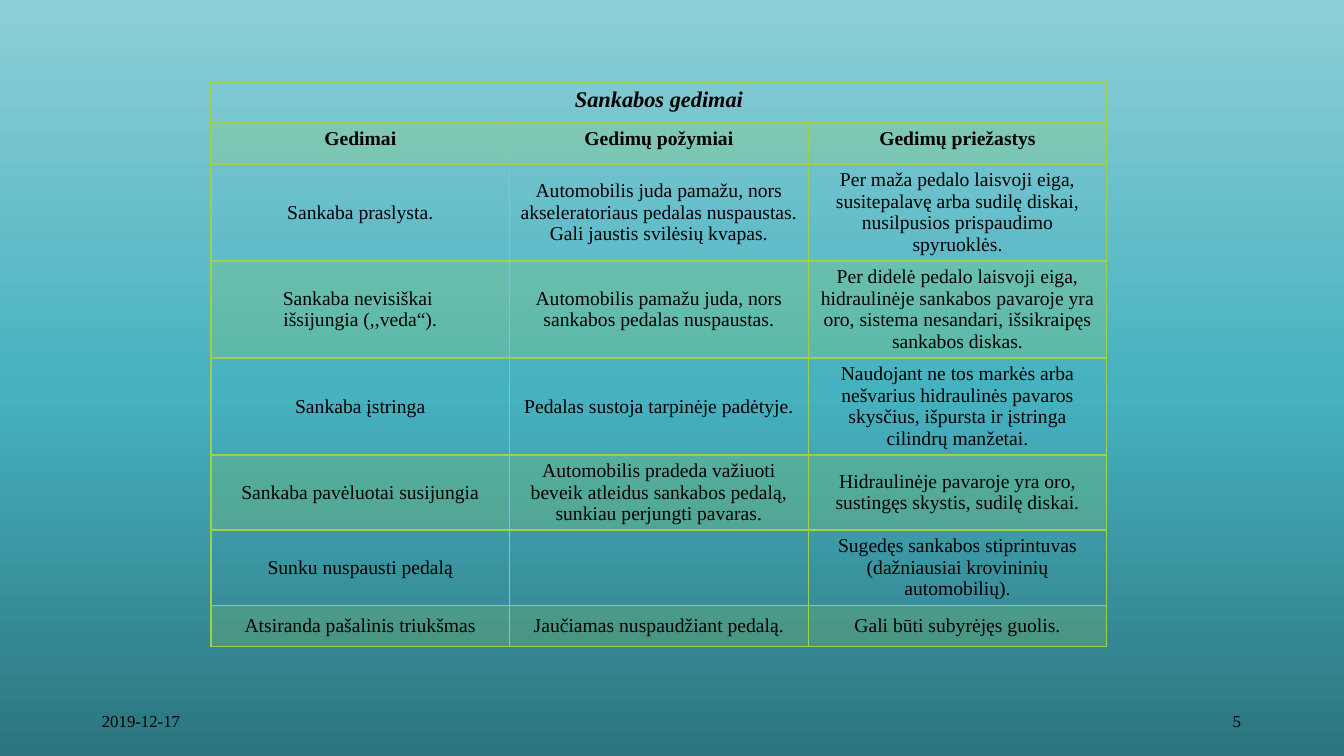
from copy import deepcopy
from dataclasses import dataclass

from lxml import etree
from pptx import Presentation
from pptx import util as u
from pptx.dml.color import RGBColor
from pptx.enum import text
from pptx.oxml.ns import qn

SCALE = 914400 / 100.8  # EMU per px


@dataclass(frozen=True)
class Theme:
    font: str = "Times New Roman"
    ink: str = "000000"
    accent: str = "A2CF49"
    band_opacity: int = 20
    background: tuple = ((0, "2C757F"), (0.48, "46B1BF"), (1, "8DCFD8"))
    title_size: int = 16
    body_size: int = 14
    footer_size: int = 12
    thin: int = 1
    thick: int = 2


THEME = Theme()
TITLE = "Sankabos gedimai"
HEADINGS = ("Gedimai", "Gedimų požymiai", "Gedimų priežastys")
FAULTS = (
    ("Sankaba praslysta.",
     "Automobilis juda pamažu, nors akseleratoriaus pedalas nuspaustas. Gali jaustis svilėsių kvapas.",
     "Per maža pedalo laisvoji eiga, susitepalavę arba sudilę diskai, nusilpusios prispaudimo spyruoklės."),
    ("Sankaba nevisiškai \nišsijungia (,,veda“).",
     "Automobilis pamažu juda, nors sankabos pedalas nuspaustas.",
     "Per didelė pedalo laisvoji eiga, hidraulinėje sankabos pavaroje yra oro, "
     "sistema nesandari, išsikraipęs sankabos diskas."),
    ("Sankaba įstringa",
     "Pedalas sustoja tarpinėje padėtyje.",
     "Naudojant ne tos markės arba nešvarius hidraulinės pavaros skysčius, "
     "išpursta ir įstringa cilindrų manžetai."),
    ("Sankaba pavėluotai susijungia",
     "Automobilis pradeda važiuoti beveik atleidus sankabos pedalą, sunkiau perjungti pavaras.",
     "Hidraulinėje pavaroje yra oro, sustingęs skystis, sudilę diskai."),
    ("Sunku nuspausti pedalą",
     "",
     "Sugedęs sankabos stiprintuvas (dažniausiai krovininių automobilių)."),
    ("Atsiranda pašalinis triukšmas",
     "Jaučiamas nuspaudžiant pedalą.",
     "Gali būti subyrėjęs guolis."),
)
ROW_HEIGHTS = (41, 41, 97, 97, 97, 75, 75, 41)


def px(length):
    return u.Emu(round(length * SCALE))


def write(frame, words, size, align, bold=False, italic=False):
    frame.text = words
    for para in frame.paragraphs:
        para.alignment = align
        for span in para.runs:
            span.font.name = THEME.font
            span.font.size = u.Pt(size)
            span.font.bold = bold
            span.font.italic = italic
            span.font.color.rgb = RGBColor.from_string(THEME.ink)


def paint_background(page):
    fill = page.background.fill
    fill.gradient()
    fill.gradient_angle = 90
    stop_list = page.element.find(".//" + qn("a:gsLst"))
    stop_list.append(deepcopy(stop_list[0]))
    for stop, (position, color) in zip(fill.gradient_stops, THEME.background):
        stop.position = position
        stop.color.rgb = RGBColor.from_string(color)


def draw_borders(cell, widths):
    properties = cell._tc.get_or_add_tcPr()
    for side, width in widths.items():
        line = etree.SubElement(properties, qn("a:ln" + side), w=str(u.Pt(width)))
        solid = etree.SubElement(line, qn("a:solidFill"))
        etree.SubElement(solid, qn("a:srgbClr"), val=THEME.accent)


def fill_cell(cell, banded):
    if not banded:
        cell.fill.background()
        return
    cell.fill.solid()
    cell.fill.fore_color.rgb = RGBColor.from_string(THEME.accent)
    color = cell._tc.tcPr.find(qn("a:solidFill"))[0]
    etree.SubElement(color, qn("a:alpha"), val=str(THEME.band_opacity * 1000))


def add_fault_table(page, left, top, width):
    rows = ((TITLE, "", ""), HEADINGS, *FAULTS)
    columns = len(HEADINGS)
    table = page.shapes.add_table(
        len(rows), columns, px(left), px(top), px(width), px(sum(ROW_HEIGHTS))).table
    table.first_row = table.horz_banding = False
    for column in table.columns:
        column.width = px(width / columns)
    for index, (words, height) in enumerate(zip(rows, ROW_HEIGHTS)):
        table.rows[index].height = px(height)
        is_title, is_head = index == 0, index < 2
        widths = {"L": THEME.thin, "R": THEME.thin,
                  "T": THEME.thick if index == 1 else THEME.thin,
                  "B": THEME.thick if is_title else THEME.thin}
        for cell, content in zip(table.rows[index].cells, words):
            draw_borders(cell, widths)
            fill_cell(cell, banded=index % 2 == 1)
            cell.vertical_anchor = (
                text.MSO_ANCHOR.TOP if is_head else text.MSO_ANCHOR.MIDDLE)
            write(cell.text_frame, content,
                  THEME.title_size if is_title else THEME.body_size,
                  text.PP_ALIGN.CENTER, bold=is_head, italic=is_title)
    table.cell(0, 0).merge(table.cell(0, columns - 1))


def add_footer(page, left, top, width, height):
    # Date on the left, page number on the right
    box_width = 302
    for words, x, align in (
            ("2019-12-17", left, text.PP_ALIGN.LEFT),
            ("5", left + width - box_width, text.PP_ALIGN.RIGHT)):
        box = page.shapes.add_textbox(px(x), px(top), px(box_width), px(height))
        box.text_frame.word_wrap = True
        box.text_frame.vertical_anchor = text.MSO_ANCHOR.MIDDLE
        write(box.text_frame, words, THEME.footer_size, align)


def main():
    deck = Presentation()
    deck.slide_width, deck.slide_height = px(1344), px(756)
    page = deck.slides.add_slide(deck.slide_layouts[6])
    paint_background(page)
    add_fault_table(page, 211, 82, 896)
    add_footer(page, 92, 701, 1159, 40)
    deck.save("out.pptx")


if __name__ == "__main__":
    main()
